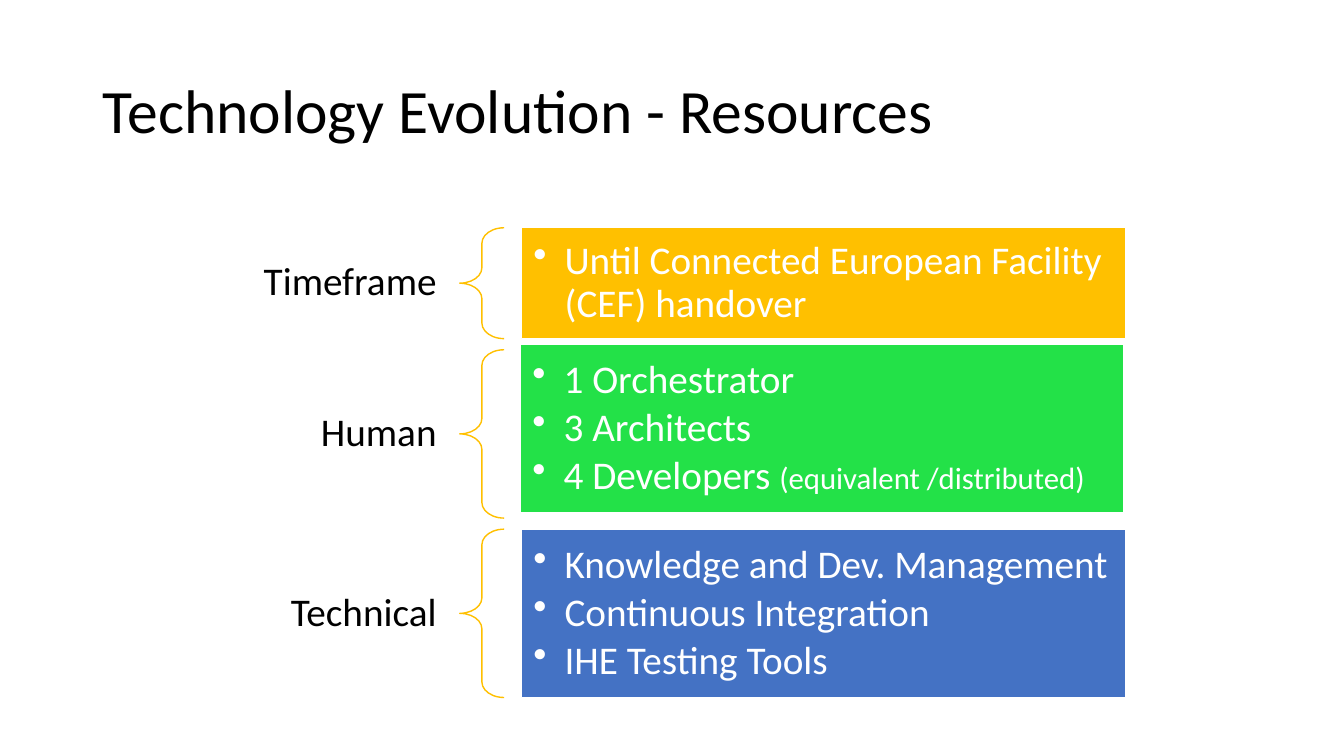
from dataclasses import dataclass

from lxml import etree
from pptx import Presentation
from pptx import util as u
from pptx.dml.color import RGBColor
from pptx.enum import shapes, text
from pptx.oxml.ns import qn


@dataclass(frozen=True)
class Theme:
    font: str = "Calibri"
    dark: str = "000000"
    light: str = "FFFFFF"
    gold: str = "FFC000"
    green: str = "23E148"
    blue: str = "4472C4"
    head: int = 44
    body: int = 28
    note: int = 22


class Deck:
    def __init__(self, theme):
        self.theme = theme
        self.prs = Presentation()
        self.prs.slide_width = u.Inches(13.33)
        self.prs.slide_height = u.Inches(7.5)
        self.slide = self.prs.slides.add_slide(self.prs.slide_layouts[5])

    def place(self, left, top, width, height):
        return [u.Inches(n) for n in (left, top, width, height)]

    def frame(self, shape, side, edge):
        tf = shape.text_frame
        tf.word_wrap = True
        tf.auto_size = text.MSO_AUTO_SIZE.NONE
        tf.vertical_anchor = text.MSO_ANCHOR.MIDDLE
        tf.margin_left = tf.margin_right = u.Inches(side)
        tf.margin_top = tf.margin_bottom = u.Inches(edge)
        return tf

    def format(self, para, size, color, align, after=0):
        para.alignment = align
        para.line_spacing = 0.9
        para.space_after = u.Pt(after)
        for run in para.runs:
            run.font.name = self.theme.font
            run.font.size = u.Pt(size)
            run.font.color.rgb = RGBColor.from_string(color)

    def title(self, words, *box):
        shape = self.slide.shapes.title
        shape.left, shape.top, shape.width, shape.height = self.place(*box)
        tf = self.frame(shape, 0.1, 0.05)
        tf.text = words
        self.format(tf.paragraphs[0], self.theme.head, self.theme.dark,
                    text.PP_ALIGN.LEFT)

    def label(self, words, *box):
        shape = self.slide.shapes.add_textbox(*self.place(*box))
        tf = self.frame(shape, 0.22, 0.08)
        tf.text = words
        self.format(tf.paragraphs[0], self.theme.body, self.theme.dark,
                    text.PP_ALIGN.RIGHT)

    def shape(self, kind, line, *box):
        shape = self.slide.shapes.add_shape(kind, *self.place(*box))
        shape.shadow.inherit = False
        shape.line.color.rgb = RGBColor.from_string(line)
        shape.line.width = u.Pt(1)
        return shape

    def brace(self, *box):
        shape = self.shape(shapes.MSO_SHAPE.LEFT_BRACE, self.theme.gold, *box)
        shape.adjustments[0] = 0.35
        shape.fill.background()

    def bullet(self, para):
        props = para._p.get_or_add_pPr()
        props.set("marL", str(u.Inches(0.31)))
        props.set("indent", str(-u.Inches(0.31)))
        etree.SubElement(props, qn("a:buChar")).set("char", "•")

    def panel(self, items, fill, *box):
        shape = self.shape(shapes.MSO_SHAPE.RECTANGLE, self.theme.light, *box)
        shape.fill.solid()
        shape.fill.fore_color.rgb = RGBColor.from_string(fill)
        tf = self.frame(shape, 0.12, 0.12)
        tf.text = "\n".join(main for main, note in items)
        for para, (main, note) in zip(tf.paragraphs, items):
            if note:
                para.add_run().text = note
            self.format(para, self.theme.body, self.theme.light,
                        text.PP_ALIGN.LEFT, 4)
            if note:
                para.runs[-1].font.size = u.Pt(self.theme.note)
            self.bullet(para)


def main():
    theme = Theme()
    deck = Deck(theme)
    deck.title("Technology Evolution - Resources", 0.92, 0.4, 11.5, 1.45)

    # Rows: label, brace top, panel left and top, height, fill, items
    rows = [
        ("Timeframe", 2.26, 5.17, 2.26, 1.1, theme.gold,
         [("Until Connected European Facility (CEF) handover", "")]),
        ("Human", 3.47, 5.16, 3.42, 1.67, theme.green,
         [("1 Orchestrator", ""), ("3 Architects", ""),
          ("4 Developers ", "(equivalent /distributed)")]),
        ("Technical", 5.25, 5.17, 5.25, 1.67, theme.blue,
         [("Knowledge and Dev. Management", ""),
          ("Continuous Integration", ""), ("IHE Testing Tools", "")]),
    ]
    tall = 0.61
    for name, top, left, start, high, fill, items in rows:
        deck.label(name, 2.35, top + (high - tall) / 2, 2.2, tall)
        deck.brace(4.56, top, 0.44, high)
        deck.panel(items, fill, left, start, 5.99, high)

    deck.prs.save("out.pptx")


if __name__ == "__main__":
    main()
